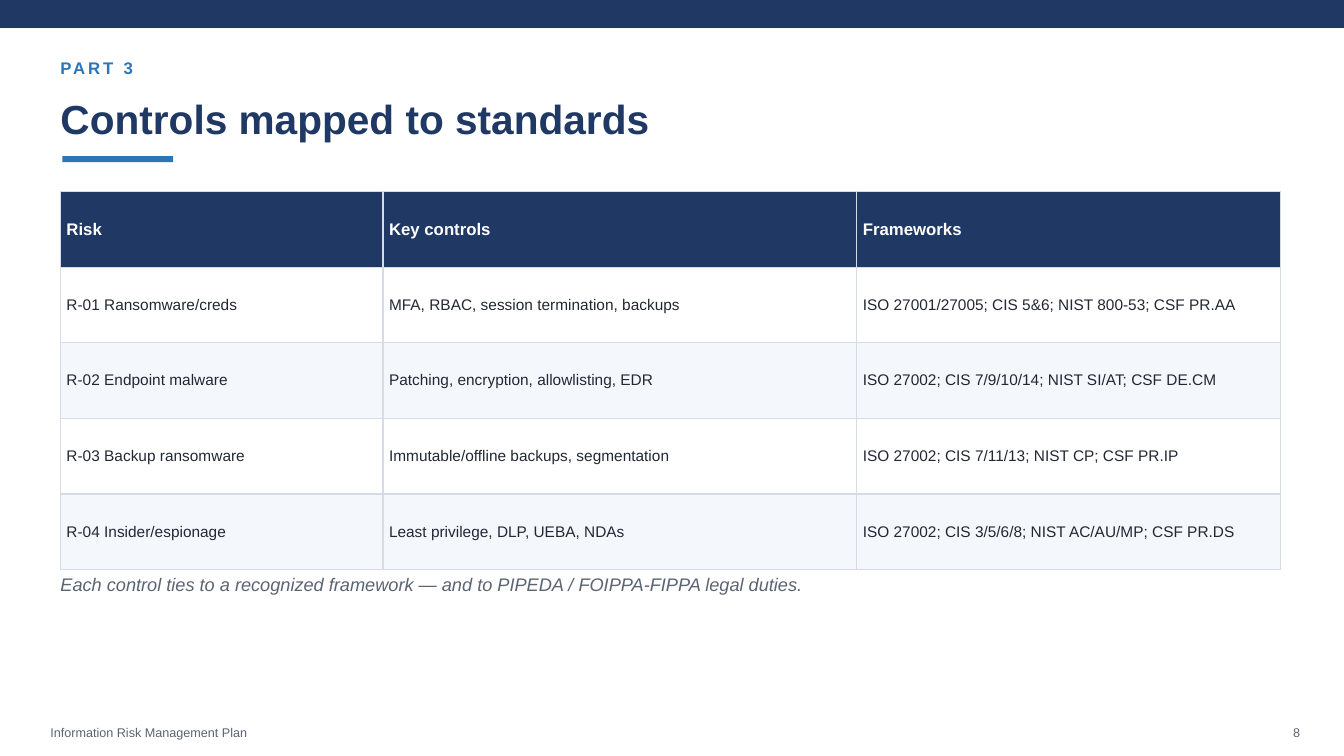
from lxml import etree
from pptx import Presentation
from pptx.dml.color import RGBColor
from pptx.enum import shapes, text
from pptx.oxml import ns
from pptx.util import Pt

NAVY, BLUE, GREY, INK = "1F3864", "2E75B6", "5B6472", "222833"
WHITE, PALE, RULE = "FFFFFF", "F4F7FC", "D5DCE6"
LEFT = 43.2

CONTROLS = [
    ("Risk", "Key controls", "Frameworks"),
    ("R-01 Ransomware/creds", "MFA, RBAC, session termination, backups",
     "ISO 27001/27005; CIS 5&6; NIST 800-53; CSF PR.AA"),
    ("R-02 Endpoint malware", "Patching, encryption, allowlisting, EDR",
     "ISO 27002; CIS 7/9/10/14; NIST SI/AT; CSF DE.CM"),
    ("R-03 Backup ransomware", "Immutable/offline backups, segmentation",
     "ISO 27002; CIS 7/11/13; NIST CP; CSF PR.IP"),
    ("R-04 Insider/espionage", "Least privilege, DLP, UEBA, NDAs",
     "ISO 27002; CIS 3/5/6/8; NIST AC/AU/MP; CSF PR.DS"),
]


def colour(hex_string):
    return RGBColor.from_string(hex_string)


class Painter:
    """Holds the style and the page being drawn."""

    def __init__(self, page, font="Arial"):
        self.page = page
        self.font = font

    def style(self, para, size, hue, bold=False, italic=False):
        font = para.font
        font.name, font.size = self.font, Pt(size)
        font.bold, font.italic = bold, italic
        font.color.rgb = colour(hue)

    def bar(self, left, top, width, height, hue):
        box = self.page.shapes.add_shape(
            shapes.MSO_SHAPE.RECTANGLE, Pt(left), Pt(top), Pt(width), Pt(height))
        box.shadow.inherit = False
        box.fill.solid()
        box.fill.fore_color.rgb = colour(hue)
        box.line.fill.background()

    def set_text(self, box, words, size, hue, align=text.PP_ALIGN.LEFT, **weight):
        frame = box.text_frame
        frame.text = words
        frame.word_wrap = True
        frame.auto_size = text.MSO_AUTO_SIZE.NONE
        frame.vertical_anchor = text.MSO_ANCHOR.MIDDLE
        frame.margin_left = frame.margin_right = 0
        frame.margin_top = frame.margin_bottom = 0
        para = frame.paragraphs[0]
        para.alignment = align
        self.style(para, size, hue, **weight)
        return para

    def title(self, left, top, width, height, words, size, hue):
        box = self.page.shapes.title
        box.left, box.top = Pt(left), Pt(top)
        box.width, box.height = Pt(width), Pt(height)
        self.set_text(box, words, size, hue, bold=True)

    def label(self, left, top, width, height, words, size, hue, spacing=0, **look):
        box = self.page.shapes.add_textbox(Pt(left), Pt(top), Pt(width), Pt(height))
        para = self.set_text(box, words, size, hue, **look)
        if spacing:
            para.runs[0].font._element.set("spc", str(spacing * 100))

    def borders(self, cell, hue, width):
        properties = cell._tc.get_or_add_tcPr()
        for side in ("lnL", "lnR", "lnT", "lnB"):
            line = etree.SubElement(properties, ns.qn(f"a:{side}"), w=str(Pt(width)))
            fill = etree.SubElement(line, ns.qn("a:solidFill"))
            etree.SubElement(fill, ns.qn("a:srgbClr"), val=hue)

    def table(self, left, top, widths, row_height, rows):
        frame = self.page.shapes.add_table(
            len(rows), len(widths), Pt(left), Pt(top),
            Pt(sum(widths)), Pt(row_height * len(rows)))
        grid = frame.table
        grid.horz_banding = False
        for column, width in zip(grid.columns, widths):
            column.width = Pt(width)
        for r, row in enumerate(rows):
            grid.rows[r].height = Pt(row_height)
            header = r == 0
            back = NAVY if header else (PALE, WHITE)[r % 2]
            for c, words in enumerate(row):
                cell = grid.cell(r, c)
                cell.text = words
                cell.vertical_anchor = text.MSO_ANCHOR.MIDDLE
                cell.margin_left = cell.margin_right = Pt(4.3)
                cell.margin_top = cell.margin_bottom = Pt(4.3)
                self.borders(cell, RULE, 1)
                cell.fill.solid()
                cell.fill.fore_color.rgb = colour(back)
                self.style(cell.text_frame.paragraphs[0], 12 if header else 11,
                           WHITE if header else INK, bold=header)


def main():
    deck = Presentation()
    deck.slide_width, deck.slide_height = Pt(960), Pt(540)
    painter = Painter(deck.slides.add_slide(deck.slide_layouts[5]))

    # Heading
    painter.bar(0, 0, 960, 20, NAVY)
    painter.label(LEFT, 41.8, 864, 13.7, "PART 3", 12, BLUE, spacing=2, bold=True)
    painter.title(LEFT, 68.4, 871.2, 32.4, "Controls mapped to standards", 29, NAVY)
    painter.bar(44.6, 111.6, 79.2, 4.3, BLUE)

    # Controls table and its remark
    painter.table(LEFT, 136.8, (230.4, 338.4, 302.4), 54, CONTROLS)
    painter.label(
        LEFT, 410.4, 849.6, 14.4,
        "Each control ties to a recognized framework — and to PIPEDA / FOIPPA-FIPPA legal duties.",
        13, GREY, italic=True)

    # Footer
    painter.label(36, 518.4, 720, 10, "Information Risk Management Plan", 9, GREY)
    painter.label(892.8, 518.4, 36, 10, "8", 9, GREY, align=text.PP_ALIGN.RIGHT)

    deck.save("out.pptx")


if __name__ == "__main__":
    main()
